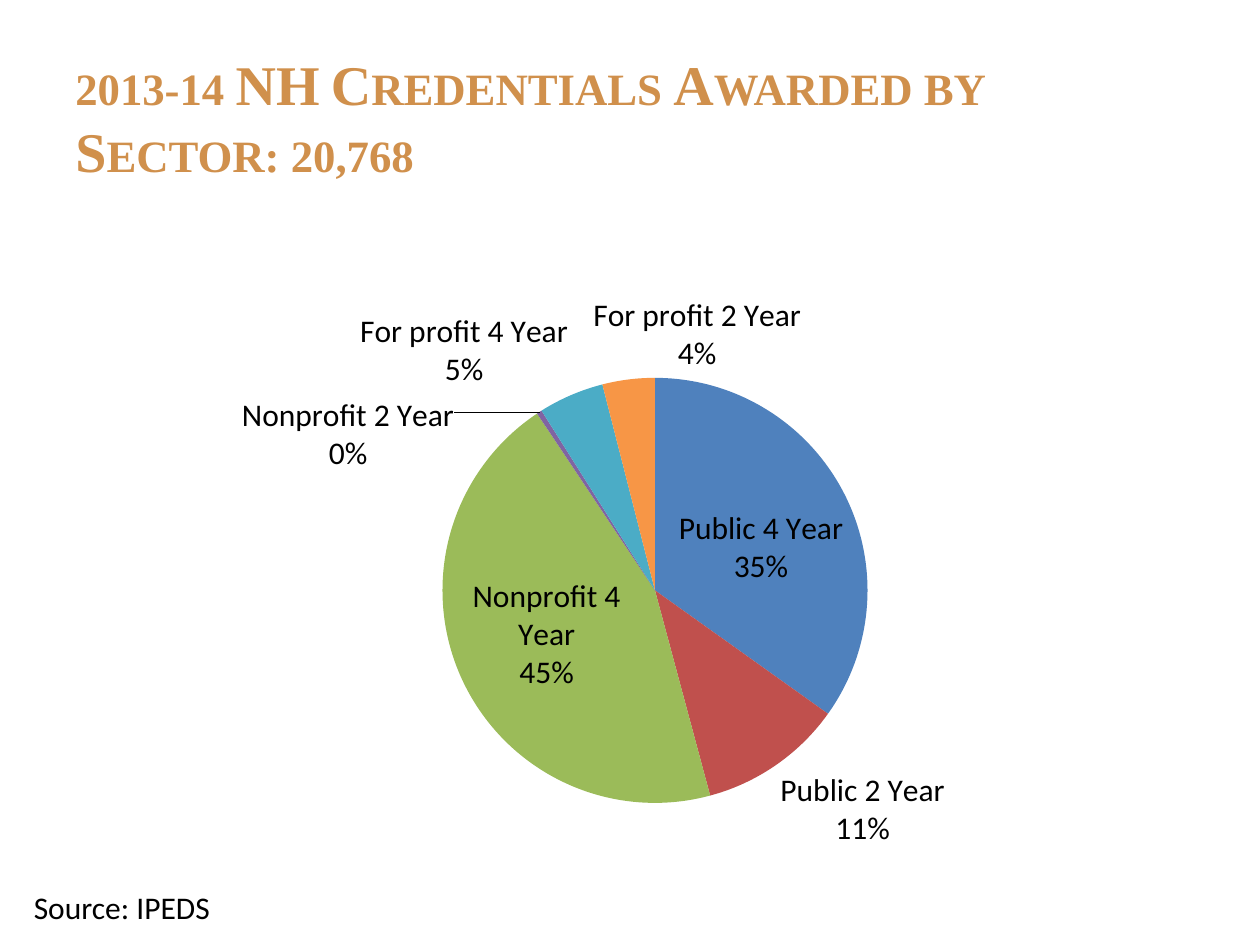
import pptx
import pptx.chart.data
import pptx.dml.color
import pptx.enum.chart
import pptx.enum.text
import pptx.oxml
import pptx.oxml.ns
import pptx.util
from pptx.util import Inches

TITLE = "2013-14 NH Credentials Awarded by Sector: 20,768"
SOURCE = "Source: IPEDS"
CENTER = pptx.enum.chart.XL_LABEL_POSITION.CENTER
OUTSIDE = pptx.enum.chart.XL_LABEL_POSITION.OUTSIDE_END
# sector, percent of credentials, slice colour, label position
SECTORS = [
    ("Public 4 Year", 35, "4F81BD", CENTER),
    ("Public 2 Year", 11, "C0504D", OUTSIDE),
    ("Nonprofit 4 Year", 45, "9BBB59", CENTER),
    ("Nonprofit 2 Year", 0.4, "8064A2", OUTSIDE),  # a sliver that rounds to 0%
    ("For profit 4 Year", 5, "4BACC6", OUTSIDE),
    ("For profit 2 Year", 4, "F79646", OUTSIDE),
]
# label offsets as fractions of the chart
LABEL_SHIFTS = {
    "Public 4 Year": (0.01, 0.01),
    "Nonprofit 4 Year": (-0.01, 0),
    "Nonprofit 2 Year": (-0.07, 0.11),
    "For profit 2 Year": (0.15, 0),
}
PIE_AREA = {"x": 0.33, "y": 0.17, "w": 0.38, "h": 0.7}


def set_font(font, name, size, color, bold=False):
    font.name = name
    font.size = pptx.util.Pt(size)
    font.bold = bold
    font.color.rgb = pptx.dml.color.RGBColor.from_string(color)


def add_text(slide, box, text, font, wrap):
    shape = slide.shapes.add_textbox(*map(Inches, box))
    frame = shape.text_frame
    frame.word_wrap = wrap
    frame.text = text
    run = frame.paragraphs[0].runs[0]
    set_font(run.font, *font)
    return frame, run


def manual_layout(values, inner=False):
    """Return a c:layout element that holds the given fractions."""
    parts = ""
    if inner:
        parts = '<c:layoutTarget val="inner"/><c:xMode val="edge"/><c:yMode val="edge"/>'
    parts += "".join(f'<c:{key} val="{value}"/>' for key, value in values.items())
    return pptx.oxml.parse_xml(
        f'<c:layout {pptx.oxml.ns.nsdecls("c")}>'
        f"<c:manualLayout>{parts}</c:manualLayout></c:layout>"
    )


def show_name_and_percent(labels):
    """Show category and percentage on two lines in a label element."""
    for tag, shown in (("showVal", 0), ("showCatName", 1), ("showPercent", 1)):
        labels.find(pptx.oxml.ns.qn(f"c:{tag}")).set("val", str(shown))
    separator = pptx.oxml.parse_xml(
        f'<c:separator {pptx.oxml.ns.nsdecls("c")}>\n</c:separator>'
    )
    last = labels.find(pptx.oxml.ns.qn("c:showBubbleSize"))
    if last is None:
        last = labels.find(pptx.oxml.ns.qn("c:showPercent"))
    last.addnext(separator)


def add_sector_pie(slide):
    data = pptx.chart.data.CategoryChartData()
    data.categories = [name for name, *_ in SECTORS]
    data.add_series("Series 1", [percent for _, percent, *_ in SECTORS])
    chart = slide.shapes.add_chart(
        pptx.enum.chart.XL_CHART_TYPE.PIE,
        *map(Inches, (0.42, 2.18, 9.19, 4.82)), data,
    ).chart
    chart.has_legend = False
    chart.has_title = False
    set_font(chart.font, "Calibri", 18, "000000")

    plot = chart.plots[0]
    plot.vary_by_categories = True
    series = plot.series[0]
    set_font(series.data_labels.font, "Calibri", 18, "000000")

    for index, (_, _, color, position) in enumerate(SECTORS):
        point = series.points[index]
        point.format.fill.solid()
        point.format.fill.fore_color.rgb = pptx.dml.color.RGBColor.from_string(color)
        label = point.data_label
        set_font(label.font, "Calibri", 18, "000000")
        label.position = position

    label_list = series.data_labels._element
    show_name_and_percent(label_list)
    for element, (name, *_) in zip(label_list.findall(pptx.oxml.ns.qn("c:dLbl")), SECTORS):
        show_name_and_percent(element)
        if name in LABEL_SHIFTS:
            shift = dict(zip("xy", LABEL_SHIFTS[name]))
            element.find(pptx.oxml.ns.qn("c:idx")).addnext(manual_layout(shift))

    plot_area = chart._chartSpace.chart.plotArea
    for old_layout in plot_area.findall(pptx.oxml.ns.qn("c:layout")):
        plot_area.remove(old_layout)
    plot_area.insert(0, manual_layout(PIE_AREA, inner=True))


def main():
    presentation = pptx.Presentation()
    presentation.slide_width, presentation.slide_height = Inches(10), Inches(7.5)
    slide = presentation.slides.add_slide(presentation.slide_layouts[6])

    add_sector_pie(slide)
    title_frame, title_run = add_text(
        slide, (0.5, 0.3, 9, 1.25), TITLE,
        ("Times New Roman", 32, "D0904C", True), wrap=True,
    )
    title_frame.vertical_anchor = pptx.enum.text.MSO_ANCHOR.MIDDLE
    title_run.font._element.set("cap", "small")
    source_frame, _ = add_text(
        slide, (0.17, 7, 1.73, 0.4), SOURCE, ("Calibri", 18, "000000"), wrap=False
    )
    source_frame.auto_size = pptx.enum.text.MSO_AUTO_SIZE.SHAPE_TO_FIT_TEXT

    presentation.save("out.pptx")


if __name__ == "__main__":
    main()
